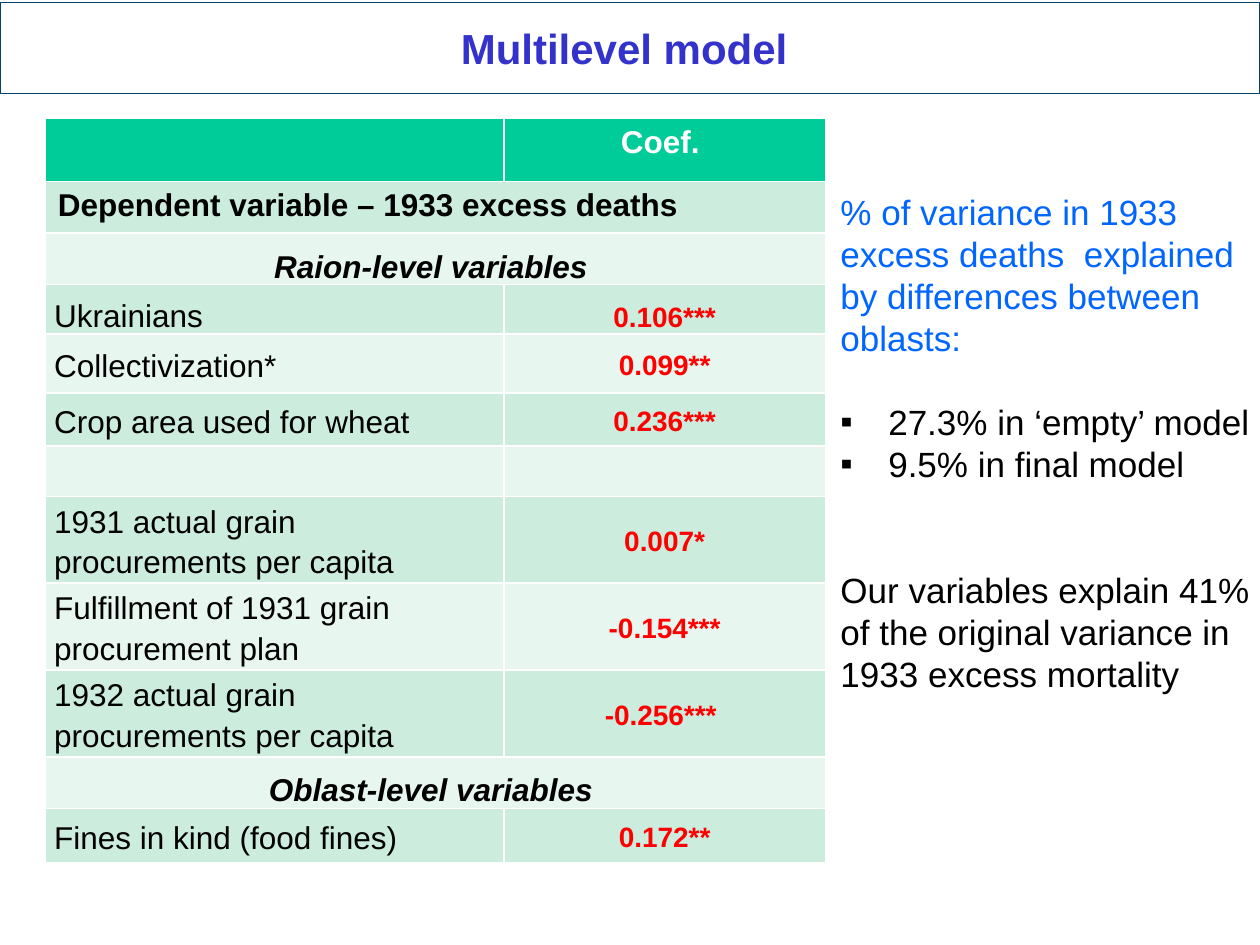
import pptx
import pptx.dml.color
import pptx.enum.text
import pptx.util
import lxml.etree
from dataclasses import dataclass

Inches = pptx.util.Inches
Pt = pptx.util.Pt
Align = pptx.enum.text.PP_ALIGN
Anchor = pptx.enum.text.MSO_ANCHOR


@dataclass(frozen=True)
class Theme:
    font: str = "Arial"
    title: str = "3333CC"
    outline: str = "004466"
    white: str = "FFFFFF"
    black: str = "000000"
    lead: str = "0066FF"
    value: str = "FF0000"
    header: str = "00CC99"
    bands: tuple = ("E7F6EF", "CCECDE")
    title_size: int = 24
    body_size: int = 20
    table_size: int = 18
    value_size: int = 16


theme = Theme()


def color(code):
    return pptx.dml.color.RGBColor.from_string(code)


def style(para, size, code, bold=False, italic=False, align=Align.LEFT):
    para.alignment = align
    font = para.font
    font.name, font.size = theme.font, Pt(size)
    font.bold, font.italic = bold, italic
    font.color.rgb = color(code)


deck = pptx.Presentation()
deck.slide_width, deck.slide_height = Inches(10), Inches(7.5)
page = deck.slides.add_slide(deck.slide_layouts[1])

# Title bar
title = page.shapes.title
title.left, title.top, title.width, title.height = (
    Inches(0), Inches(0.02), Inches(10), Inches(0.72))
title.fill.solid()
title.fill.fore_color.rgb = color(theme.white)
title.line.color.rgb = color(theme.outline)
title.line.width = Pt(0.75)
title.text_frame.text = "Multilevel model "
title.text_frame.vertical_anchor = Anchor.MIDDLE
style(title.text_frame.paragraphs[0], theme.title_size, theme.title,
      bold=True, align=Align.CENTER)

# Coefficient table: kind of row, height, label, value
rows = [
    ("header", 0.5, "", "Coef. "),
    ("dependent", 0.41, "Dependent variable – 1933 excess deaths", ""),
    ("level", 0.41, "Raion-level variables ", ""),
    ("low", 0.39, "Ukrainians ", "0.106***"),
    ("variable", 0.47, "Collectivization*", "0.099**"),
    ("variable", 0.42, "Crop area used for wheat", "0.236***"),
    ("variable", 0.4, "", ""),
    ("variable", 0.69, "1931 actual grain procurements per capita", "0.007*"),
    ("variable", 0.69, "Fulfillment of 1931 grain procurement plan", "-0.154***"),
    ("variable", 0.69, "1932 actual grain procurements per capita", "-0.256*** "),
    ("level", 0.41, "Oblast-level variables ", ""),
    ("variable", 0.43, "Fines in kind (food fines)", "0.172**"),
]
anchors = {"level": Anchor.BOTTOM, "low": Anchor.BOTTOM, "variable": Anchor.MIDDLE}
table = page.shapes.add_table(len(rows), 2, Inches(0.36), Inches(0.94),
                              Inches(6.19), Inches(5.91)).table
table.columns[0].width, table.columns[1].width = Inches(3.64), Inches(2.55)

for index, (kind, height, label, value) in enumerate(rows):
    table.rows[index].height = Inches(height)
    for column, text in enumerate((label, value)):
        cell = table.cell(index, column)
        cell.fill.solid()
        cell.fill.fore_color.rgb = color(
            theme.header if kind == "header" else theme.bands[index % 2])
        cell.text = text
        para = cell.text_frame.paragraphs[0]
        if kind == "header":
            style(para, theme.table_size, theme.white, bold=True, align=Align.CENTER)
        elif kind == "dependent":
            style(para, theme.table_size, theme.black, bold=True)
        else:
            cell.vertical_anchor = anchors[kind]
            cell.margin_left = cell.margin_right = Inches(0.07)
            cell.margin_top = cell.margin_bottom = 0
            para.line_spacing = 1.15
            if kind == "level":
                style(para, theme.table_size, theme.black, bold=True, italic=True,
                      align=Align.CENTER)
            elif column == 0:
                style(para, theme.table_size, theme.black)
            else:
                style(para, theme.value_size, theme.value, bold=True,
                      align=Align.CENTER)
    if kind in ("dependent", "level"):
        table.cell(index, 0).merge(table.cell(index, 1))

# Explained variance: text, colour, bulleted, space before in points
notes = [
    ("% of variance in 1933 excess deaths  explained by differences between oblasts:",
     theme.lead, False, 0),
    ("27.3% in ‘empty’ model", theme.black, True, 24),
    ("9.5% in final model", theme.black, True, 0),
    ("Our variables explain 41% of the original variance in 1933 excess mortality",
     theme.black, False, 48),
]
body = page.placeholders[1]
body.left, body.top, body.width, body.height = (
    Inches(6.57), Inches(1.46), Inches(3.6), Inches(4.14))
frame = body.text_frame
frame.word_wrap = True
frame.auto_size = pptx.enum.text.MSO_AUTO_SIZE.NONE
frame.vertical_anchor = Anchor.TOP
frame.text = "\n".join(note[0] for note in notes)
for para, (text, code, bulleted, gap) in zip(frame.paragraphs, notes):
    style(para, theme.body_size, code)
    para.space_before = Pt(gap)
    properties = para._p.get_or_add_pPr()
    indent = Inches(0.38) if bulleted else 0
    properties.set("marL", str(indent))
    properties.set("indent", str(-indent))
    bullet = lxml.etree.Element(
        pptx.oxml.ns.qn("a:buChar" if bulleted else "a:buNone"))
    if bulleted:
        bullet.set("char", "▪")
    properties.find(pptx.oxml.ns.qn("a:defRPr")).addprevious(bullet)

deck.save("out.pptx")
